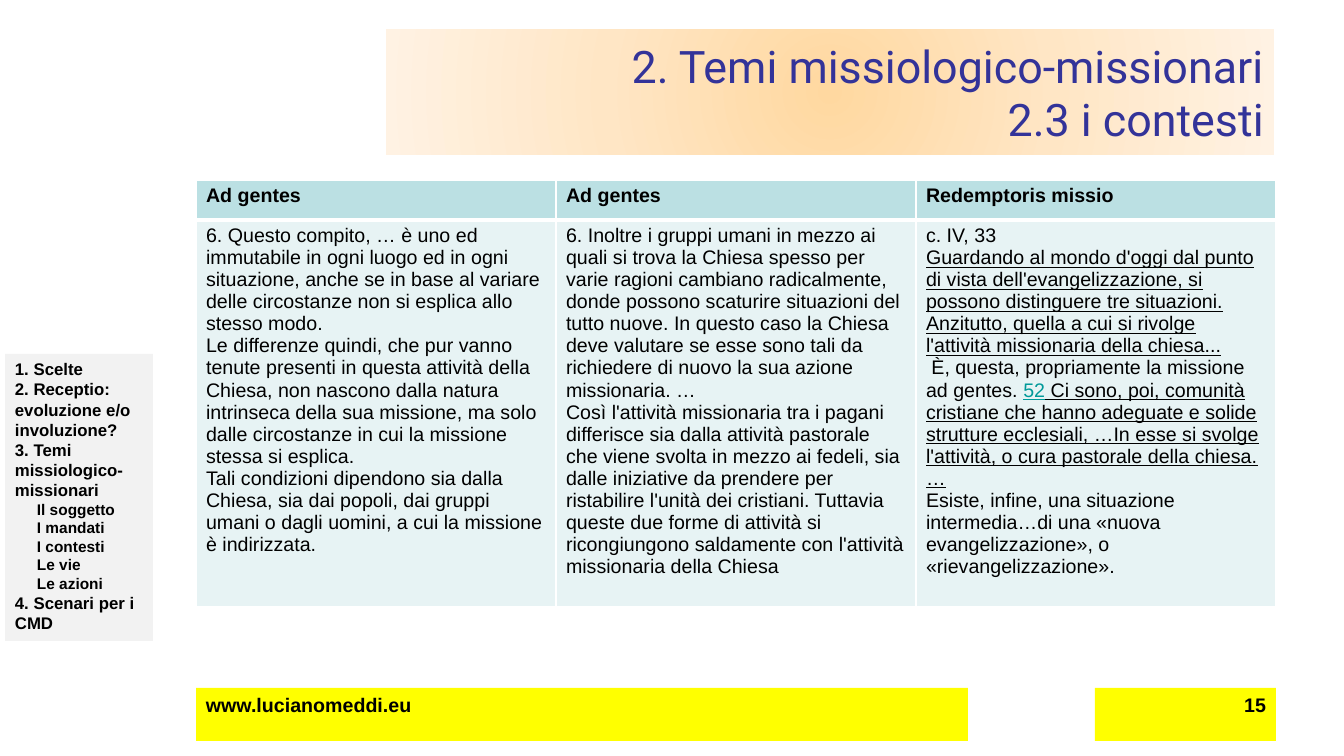
from lxml import etree
from pptx import Presentation
from pptx import util as u
from pptx.dml import color
from pptx.enum import text
from pptx.oxml import ns, parse_xml

SCALE = 914400 / 100.8  # EMU per px
LEFT, COL = 196, 360
BLACK, WHITE = "000000", "FFFFFF"
HEAD = {"name": "Arial", "size": u.Pt(14), "bold": True}
BODY = {**HEAD, "bold": False}
TITLE = {"name": "Roboto", "size": u.Pt(32), "bold": False}
ITEM = {**HEAD, "size": u.Pt(12)}
SUB = {**HEAD, "size": u.Pt(11)}

MENU = [
    ("1. Scelte", 0),
    ("2. Receptio: evoluzione e/o involuzione?", 0),
    ("3. Temi missiologico-missionari", 0),
    ("Il soggetto", 1),
    ("I mandati", 1),
    ("I contesti", 1),
    ("Le vie", 1),
    ("Le azioni", 1),
    ("4. Scenari per i CMD", 0),
]
HEADS = ["Ad gentes", "Ad gentes", "Redemptoris missio"]
# Each cell holds paragraphs; each paragraph holds (words, underline, colour)
CELLS = [
    [
        [("6. Questo compito, … è uno ed immutabile in ogni luogo ed in ogni "
          "situazione, anche se in base al variare delle circostanze non si "
          "esplica allo stesso modo.", False, BLACK)],
        [("Le differenze quindi, che pur vanno tenute presenti in questa "
          "attività della Chiesa, non nascono dalla natura intrinseca della "
          "sua missione, ma solo dalle circostanze in cui la missione stessa "
          "si esplica.", False, BLACK)],
        [("Tali condizioni dipendono sia dalla Chiesa, sia dai popoli, dai "
          "gruppi umani o dagli uomini, a cui la missione è indirizzata.",
          False, BLACK)],
    ],
    [
        [("6. Inoltre i gruppi umani in mezzo ai quali si trova la Chiesa "
          "spesso per varie ragioni cambiano radicalmente, donde possono "
          "scaturire situazioni del tutto nuove. In questo caso la Chiesa "
          "deve valutare se esse sono tali da richiedere di nuovo la sua "
          "azione missionaria. …", False, BLACK)],
        [("Così l'attività missionaria tra i pagani differisce sia dalla "
          "attività pastorale che viene svolta in mezzo ai fedeli, sia dalle "
          "iniziative da prendere per ristabilire l'unità dei cristiani. "
          "Tuttavia queste due forme di attività si ricongiungono saldamente "
          "con l'attività missionaria della Chiesa", False, BLACK)],
    ],
    [
        [("c. IV, 33\n", False, BLACK),
         ("Guardando al mondo d'oggi dal punto di vista "
          "dell'evangelizzazione, si possono distinguere tre situazioni. "
          "Anzitutto, quella a cui si rivolge l'attività missionaria della "
          "chiesa...\n", True, BLACK),
         (" È, questa, propriamente la missione ad gentes. ", False, BLACK),
         ("52", True, "009999"),
         (" Ci sono, poi, comunità cristiane che hanno adeguate e solide "
          "strutture ecclesiali, …In esse si svolge l'attività, o cura "
          "pastorale della chiesa. …\n", True, BLACK),
         ("Esiste, infine, una situazione intermedia…di una «nuova "
          "evangelizzazione», o «rievangelizzazione».", False, BLACK)],
    ],
]


def px(n):
    return u.Emu(round(n * SCALE))


def paint(fmt, tone):
    """Give a fill or a font a solid colour."""
    if hasattr(fmt, "solid"):
        fmt.solid()
        fmt = fmt.fore_color
    else:
        fmt = fmt.color
    fmt.rgb = color.RGBColor.from_string(tone)


def write(para, words, form, tone=BLACK, under=False):
    """Add a styled run for each line, with breaks between lines."""
    for i, line in enumerate(words.split("\n")):
        if i:
            para.add_line_break()
        if line:
            run = para.add_run()
            run.text = line
            for key, val in {**form, "underline": under}.items():
                setattr(run.font, key, val)
            paint(run.font, tone)


def box(slide, area, tone=None):
    shape = slide.shapes.add_textbox(*map(px, area))
    shape.text_frame.word_wrap = True
    if tone:
        paint(shape.fill, tone)
    return shape


def label(slide, area, words, form, fill=None, tone=BLACK, right=False):
    shape = box(slide, area, fill)
    para = shape.text_frame.paragraphs[0]
    if right:
        para.alignment = text.PP_ALIGN.RIGHT
    write(para, words, form, tone)
    return shape


def glow(shape, stops):
    """Fill a shape with a gradient that spreads from its centre."""
    marks = "".join(f'<a:gs pos="{pos * 1000}"><a:srgbClr val="{tone}"/></a:gs>'
                    for pos, tone in stops)
    grad = parse_xml(
        f'<a:gradFill {ns.nsdecls("a")} rotWithShape="1"><a:gsLst>{marks}</a:gsLst>'
        '<a:path path="circle"><a:fillToRect l="50000" t="50000" r="50000" '
        'b="50000"/></a:path></a:gradFill>')
    props = shape.element.spPr
    props.replace(props.find(ns.qn("a:noFill")), grad)


def edge(cell, base):
    """Draw white borders, the bottom one base points wide."""
    props = cell._tc.get_or_add_tcPr()
    for i, (side, width) in enumerate(zip("LRTB", (1, 1, 1, base))):
        line = etree.Element(ns.qn(f"a:ln{side}"), w=str(u.Pt(width)))
        fill = etree.SubElement(line, ns.qn("a:solidFill"))
        etree.SubElement(fill, ns.qn("a:srgbClr"), val=WHITE)
        props.insert(i, line)


def menu(slide):
    frame = box(slide, (5, 354, 148, 287), "F2F2F2").text_frame
    for i, (words, level) in enumerate(MENU):
        para = frame.add_paragraph() if i else frame.paragraphs[0]
        if level:
            para.level = level
            props = para._p.get_or_add_pPr()
            props.set("marL", str(px(28)))
            props.set("indent", str(px(-6)))
        write(para, words, SUB if level else ITEM)


def grid(slide):
    area = (LEFT, 180, 3 * COL, 424)
    table = slide.shapes.add_table(2, 3, *map(px, area)).table
    for row, high in zip(table.rows, (40, 384)):
        row.height = px(high)
    heads = [[[(words, False, BLACK)]] for words in HEADS]
    rows = [(heads, HEAD, "BBE0E3", 3), (CELLS, BODY, "E7F3F4", 1)]
    for r, (items, form, fill, base) in enumerate(rows):
        for c, paras in enumerate(items):
            table.columns[c].width = px(COL)
            cell = table.cell(r, c)
            paint(cell.fill, fill)
            edge(cell, base)
            frame = cell.text_frame
            for i, runs in enumerate(paras):
                para = frame.add_paragraph() if i else frame.paragraphs[0]
                for words, under, tone in runs:
                    write(para, words, form, tone, under)


def main():
    deck = Presentation()
    deck.slide_width, deck.slide_height = px(1344), px(756)
    slide = deck.slides.add_slide(deck.slide_layouts[6])

    # Side menu
    menu(slide)

    # Title
    title = label(slide, (386, 29, 888, 126),
                  "2. Temi missiologico-missionari\n2.3 i contesti",
                  TITLE, tone="333399", right=True)
    title.text_frame.vertical_anchor = text.MSO_ANCHOR.MIDDLE
    glow(title, [(0, "FFD8A0"), (50, "FFE6C5"), (100, "FFF2E3")])

    # Comparison table
    grid(slide)

    # Footer
    label(slide, (LEFT, 688, 772, 53), "www.lucianomeddi.eu", HEAD, "FFFF00")
    label(slide, (1095, 688, 181, 53), "15", HEAD, "FFFF00", right=True)

    deck.save("out.pptx")


if __name__ == "__main__":
    main()
